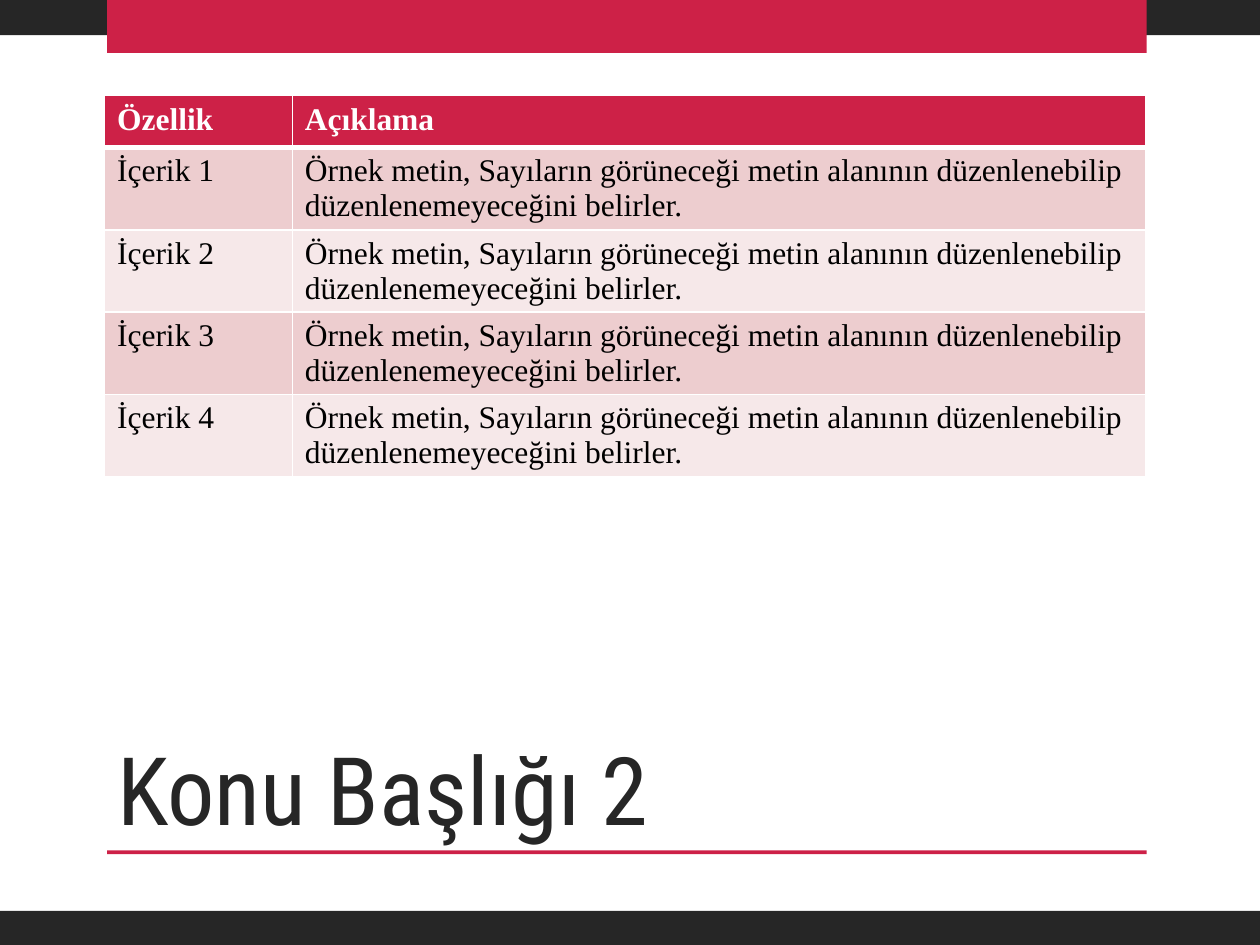
from typing import NamedTuple

from lxml import etree
from pptx import Presentation
from pptx.dml.color import RGBColor
from pptx.enum.shapes import MSO_SHAPE
from pptx.enum.text import MSO_ANCHOR, MSO_AUTO_SIZE, PP_ALIGN
from pptx.oxml.ns import qn
from pptx.util import Inches, Pt

RECT = MSO_SHAPE.RECTANGLE
BOTTOM = MSO_ANCHOR.BOTTOM
LEFT = PP_ALIGN.LEFT
NO_FIT = MSO_AUTO_SIZE.NONE

COLORS = {
    "dark": "262626",
    "red": "CD2147",
    "rose": "EDCDCF",
    "blush": "F6E8E9",
    "white": "FFFFFF",
    "black": "000000",
}
TITLE_FONT = "Roboto Condensed"
TABLE_FONT = "Times New Roman"
DETAIL = ("Örnek metin, Sayıların görüneceği metin alanının düzenlenebilip "
          "düzenlenemeyeceğini belirler.")
ROWS = [("Özellik", "Açıklama")] + [(f"İçerik {n}", DETAIL) for n in range(1, 5)]
WIDTHS = (1.49, 6.77)
HEAD_H, BODY_H = 0.41, 0.65


class Bar(NamedTuple):
    left: float
    top: float
    width: float
    height: float
    color: str


BARS = (
    Bar(-0.01, 0, 10.01, 0.28, "dark"),
    Bar(0.85, 0, 8.25, 0.42, "red"),
    Bar(0.85, 6.75, 8.25, 0.03, "red"),
    Bar(-0.01, 7.23, 10.01, 0.28, "dark"),
)


def rgb(name: str) -> RGBColor:
    return RGBColor.from_string(COLORS[name])


def draw_bar(slide, bar: Bar) -> None:
    shape = slide.shapes.add_shape(RECT, *(Inches(n) for n in bar[:4]))
    shape.shadow.inherit = False
    shape.fill.solid()
    shape.fill.fore_color.rgb = rgb(bar.color)
    shape.line.fill.background()


def add_text(frame, text: str, font: str, size: int, color: str,
             bold: bool = False) -> None:
    line = frame.paragraphs[0]
    line.alignment = LEFT
    run = line.add_run()
    run.text = text
    run.font.name = font
    run.font.size = Pt(size)
    run.font.bold = bold
    run.font.color.rgb = rgb(color)


def set_edges(cell, top: int, bottom: int) -> None:
    """Give the cell white borders; widths are in points."""
    props = cell._tc.get_or_add_tcPr()
    sides = (("L", 1), ("R", 1), ("T", top), ("B", bottom))
    for spot, (side, width) in enumerate(sides):
        edge = etree.Element(qn(f"a:ln{side}"), w=str(Pt(width)))
        fill = etree.SubElement(edge, qn("a:solidFill"))
        etree.SubElement(fill, qn("a:srgbClr"), val=COLORS["white"])
        props.insert(spot, edge)


def draw_title(slide) -> None:
    title = slide.shapes.title
    title.left, title.top = Inches(0.83), Inches(5)
    title.width, title.height = Inches(7.42), Inches(1.75)
    frame = title.text_frame
    frame.auto_size = NO_FIT
    frame.word_wrap = True
    frame.vertical_anchor = BOTTOM
    add_text(frame, "Konu Başlığı 2", TITLE_FONT, 54, "dark")


def draw_table(slide) -> None:
    heights = [HEAD_H] + [BODY_H] * (len(ROWS) - 1)
    table = slide.shapes.add_table(
        len(ROWS), len(WIDTHS), Inches(0.83), Inches(0.76),
        Inches(sum(WIDTHS)), Inches(sum(heights))).table
    for col, width in zip(table.columns, WIDTHS):
        col.width = Inches(width)
    for r, (texts, height) in enumerate(zip(ROWS, heights)):
        table.rows[r].height = Inches(height)
        head = r == 0
        fill = "red" if head else ("blush", "rose")[r % 2]
        ink = "white" if head else "black"
        for c, text in enumerate(texts):
            cell = table.cell(r, c)
            cell.fill.solid()
            cell.fill.fore_color.rgb = rgb(fill)
            set_edges(cell, 3 if r == 1 else 1, 3 if head else 1)
            add_text(cell.text_frame, text, TABLE_FONT, 18, ink, head)


def main() -> None:
    deck = Presentation()
    deck.slide_width, deck.slide_height = Inches(10), Inches(7.5)
    slide = deck.slides.add_slide(deck.slide_layouts[5])
    for bar in BARS:
        draw_bar(slide, bar)
    draw_title(slide)
    draw_table(slide)
    deck.save("out.pptx")


if __name__ == "__main__":
    main()
